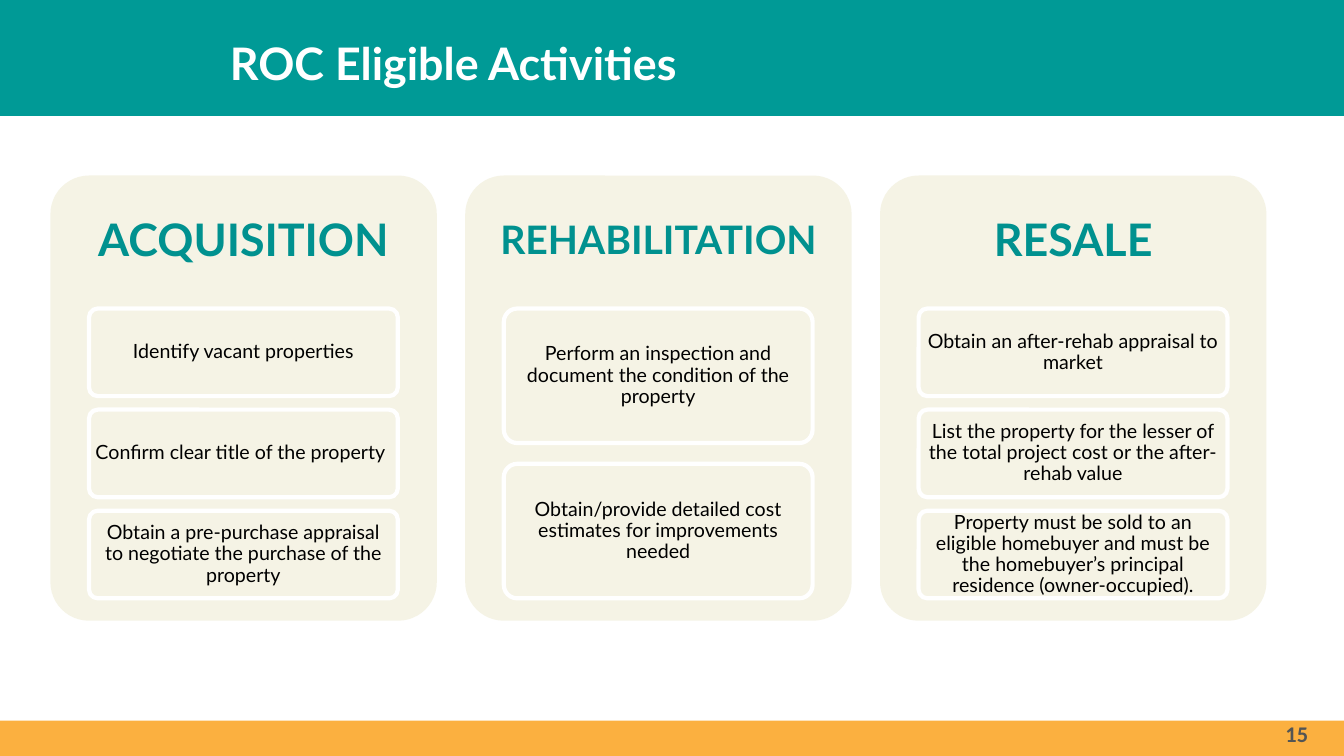
from dataclasses import dataclass

import pptx
import pptx.dml.color
import pptx.enum.shapes
import pptx.enum.text
import pptx.util
from pptx.shapes.autoshape import Shape
from pptx.slide import Slide

Pt = pptx.util.Pt
Align = pptx.enum.text.PP_ALIGN
Anchor = pptx.enum.text.MSO_ANCHOR
ShapeKind = pptx.enum.shapes.MSO_SHAPE

COLORS = {
    "teal": "009A96",
    "heading": "00918F",
    "orange": "FBB040",
    "cream": "F5F3E5",
    "white": "FFFFFF",
    "black": "000000",
    "gray": "535554",
}

CARD_LEFT, CARD_TOP, CARD_WIDTH, CARD_HEIGHT = 36, 125.4, 276, 318
CARD_PITCH = 296.3
HEADING_HEIGHT = 95
STEP_INSET, STEP_WIDTH = 27.6, 220.6
STEPS_TOP, STEPS_HEIGHT = 220.4, 207
GAP_RATIO = 0.154


@dataclass(frozen=True)
class Box:
    left: float
    top: float
    width: float
    height: float

    def lengths(self) -> tuple[int, ...]:
        return tuple(Pt(value) for value in (self.left, self.top, self.width, self.height))


@dataclass(frozen=True)
class TextStyle:
    size: float
    color: str
    bold: bool = False
    font: str = "Lato"
    alignment: Align = Align.CENTER
    anchor: Anchor = Anchor.MIDDLE
    margins: tuple[float, float] = (7.2, 3.6)


@dataclass(frozen=True)
class Step:
    text: str
    alignment: Align = Align.CENTER


@dataclass(frozen=True)
class Activity:
    heading: str
    heading_size: float
    steps: tuple[Step, ...]


ACTIVITIES = (
    Activity("ACQUISITION", 32, (
        Step("Identify vacant properties"),
        Step("Confirm clear title of the property", Align.JUSTIFY),
        Step("Obtain a pre-purchase appraisal to negotiate the purchase of the property"),
    )),
    Activity("REHABILITATION", 28, (
        Step("Perform an inspection and document the condition of the property"),
        Step("Obtain/provide detailed cost estimates for improvements needed"),
    )),
    Activity("RESALE", 32, (
        Step("Obtain an after-rehab appraisal to market"),
        Step("List the property for the lesser of the total project cost or the after-rehab value"),
        Step("Property must be sold to an eligible homebuyer and must be "
             "the homebuyer’s principal residence (owner-occupied)."),
    )),
)


def rgb(name: str) -> pptx.dml.color.RGBColor:
    return pptx.dml.color.RGBColor.from_string(COLORS[name])


def write_text(shape: Shape, text: str, style: TextStyle) -> None:
    frame = shape.text_frame
    frame.text = text
    frame.word_wrap = True
    frame.auto_size = pptx.enum.text.MSO_AUTO_SIZE.NONE
    frame.vertical_anchor = style.anchor
    frame.margin_left = frame.margin_right = Pt(style.margins[0])
    frame.margin_top = frame.margin_bottom = Pt(style.margins[1])
    paragraph = frame.paragraphs[0]
    paragraph.alignment = style.alignment
    paragraph.line_spacing = 0.9
    font = paragraph.runs[0].font
    font.name = style.font
    font.size = Pt(style.size)
    font.bold = style.bold
    font.color.rgb = rgb(style.color)


def add_panel(slide: Slide, box: Box, fill: str, rounded: bool = False, outlined: bool = False) -> Shape:
    kind = ShapeKind.ROUNDED_RECTANGLE if rounded else ShapeKind.RECTANGLE
    shape = slide.shapes.add_shape(kind, *box.lengths())
    shape.shadow.inherit = False
    shape.fill.solid()
    shape.fill.fore_color.rgb = rgb(fill)
    if rounded:
        shape.adjustments[0] = 0.1
    if outlined:
        shape.line.color.rgb = rgb("white")
        shape.line.width = Pt(3)
    else:
        shape.line.fill.background()
    return shape


def add_label(slide: Slide, box: Box, text: str, style: TextStyle) -> None:
    write_text(slide.shapes.add_textbox(*box.lengths()), text, style)


def add_title(slide: Slide, text: str) -> None:
    title = slide.shapes.title
    title.left, title.top, title.width, title.height = Box(157, 10.8, 795, 57.6).lengths()
    write_text(title, text, TextStyle(32, "white", bold=True, alignment=Align.LEFT, anchor=Anchor.BOTTOM))
    band = add_panel(slide, Box(0, 0, 960, 82.8), "teal")
    title.element.addprevious(band.element)


def add_activity(slide: Slide, activity: Activity, left: float) -> None:
    add_panel(slide, Box(left, CARD_TOP, CARD_WIDTH, CARD_HEIGHT), "cream", rounded=True)
    heading_style = TextStyle(activity.heading_size, "heading", bold=True, margins=(9, 9))
    add_label(slide, Box(left, CARD_TOP, CARD_WIDTH, HEADING_HEIGHT), activity.heading, heading_style)
    count = len(activity.steps)
    height = STEPS_HEIGHT / (count + (count - 1) * GAP_RATIO)
    for row, step in enumerate(activity.steps):
        top = STEPS_TOP + row * height * (1 + GAP_RATIO)
        box = Box(left + STEP_INSET, top, STEP_WIDTH, height)
        panel = add_panel(slide, box, "cream", rounded=True, outlined=True)
        write_text(panel, step.text, TextStyle(14, "black", alignment=step.alignment, margins=(2.8, 2.1)))


def main() -> None:
    presentation = pptx.Presentation()
    presentation.slide_width, presentation.slide_height = Pt(960), Pt(540)
    slide = presentation.slides.add_slide(presentation.slide_layouts.get_by_name("Title Only"))
    add_title(slide, "ROC Eligible Activities")
    add_panel(slide, Box(0, 514.8, 960, 25.2), "orange")
    add_label(slide, Box(903.6, 510.5, 45.4, 29.5), "15", TextStyle(16, "gray", bold=True, font="Calibri"))
    for column, activity in enumerate(ACTIVITIES):
        add_activity(slide, activity, CARD_LEFT + column * CARD_PITCH)
    presentation.save("out.pptx")


if __name__ == "__main__":
    main()
